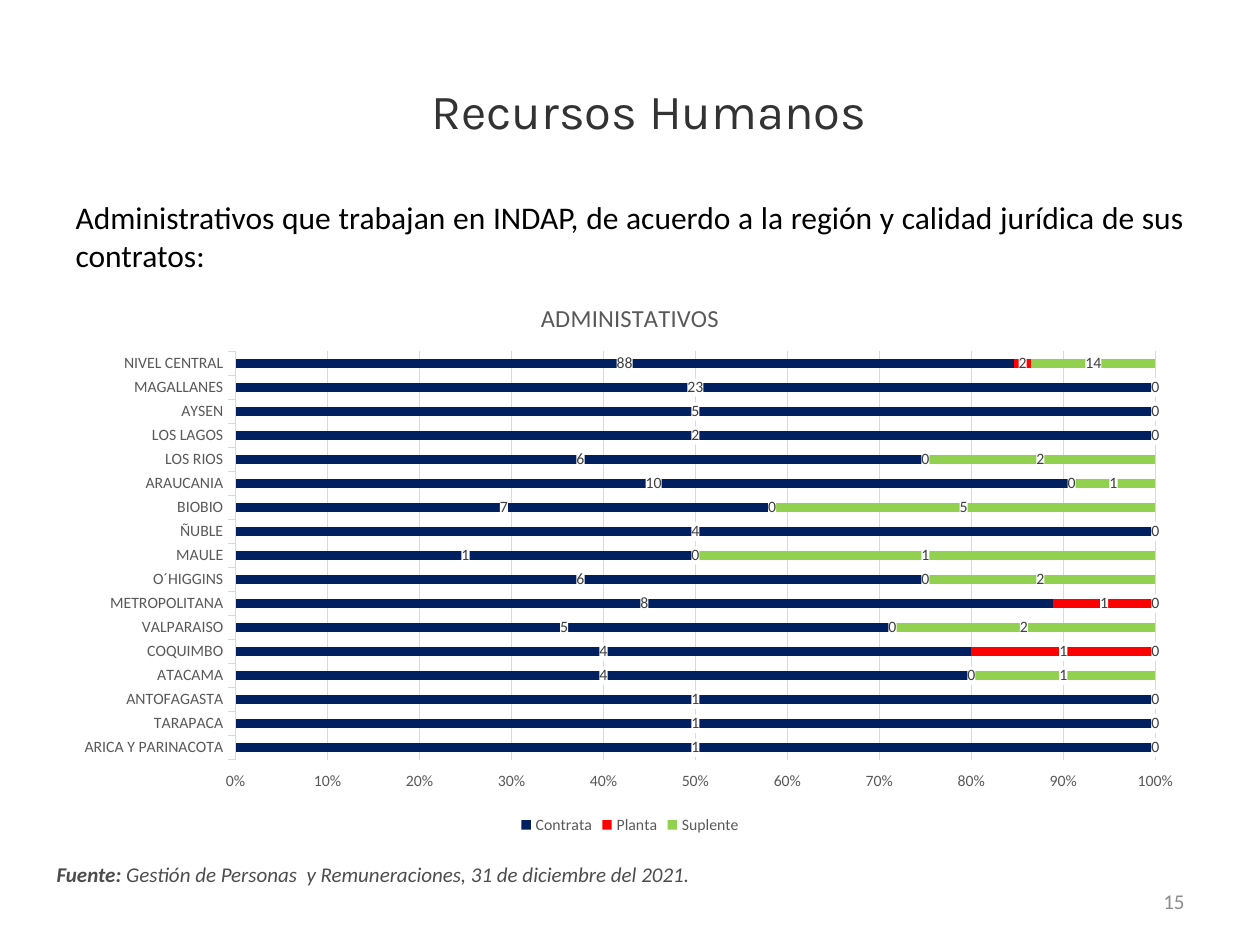
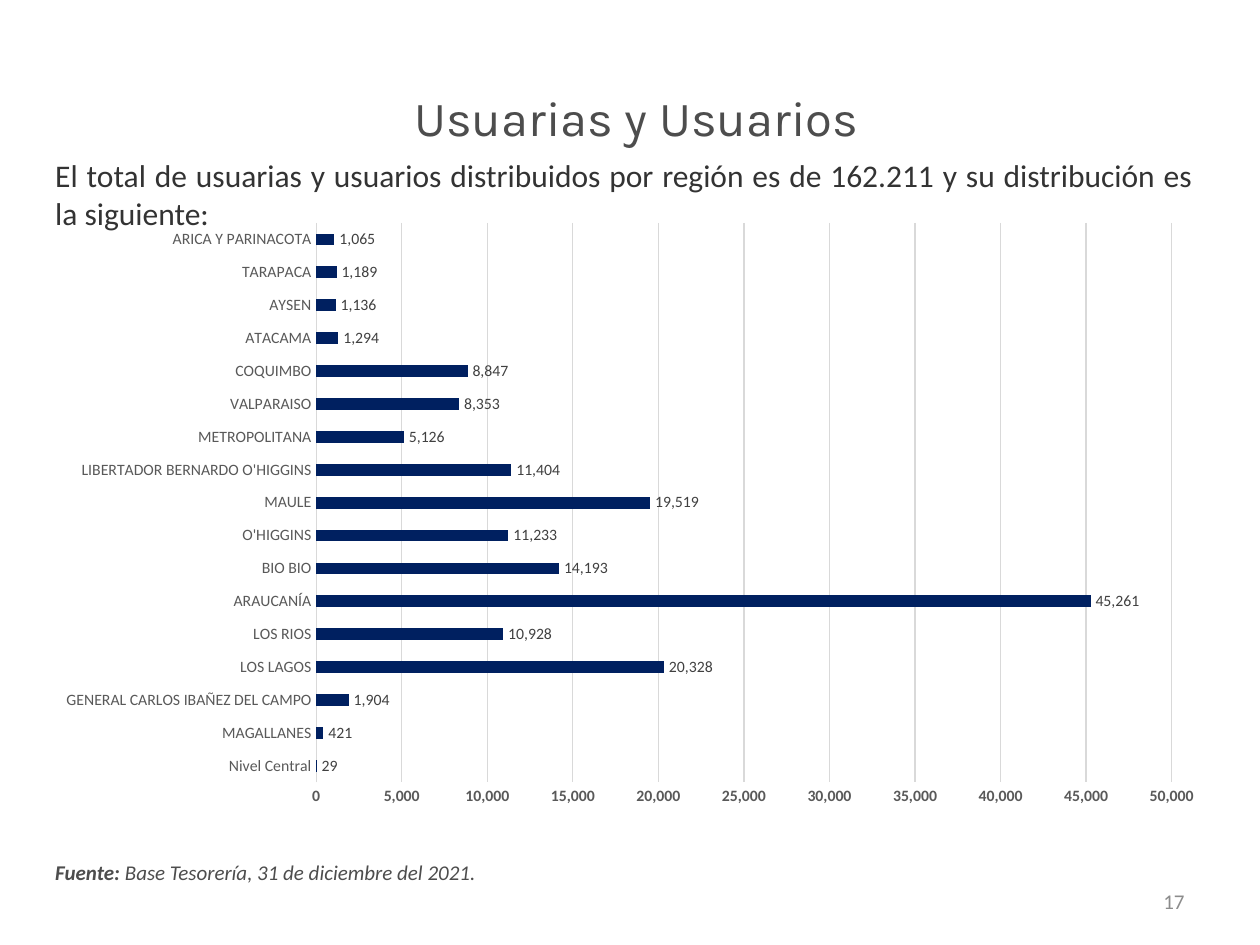
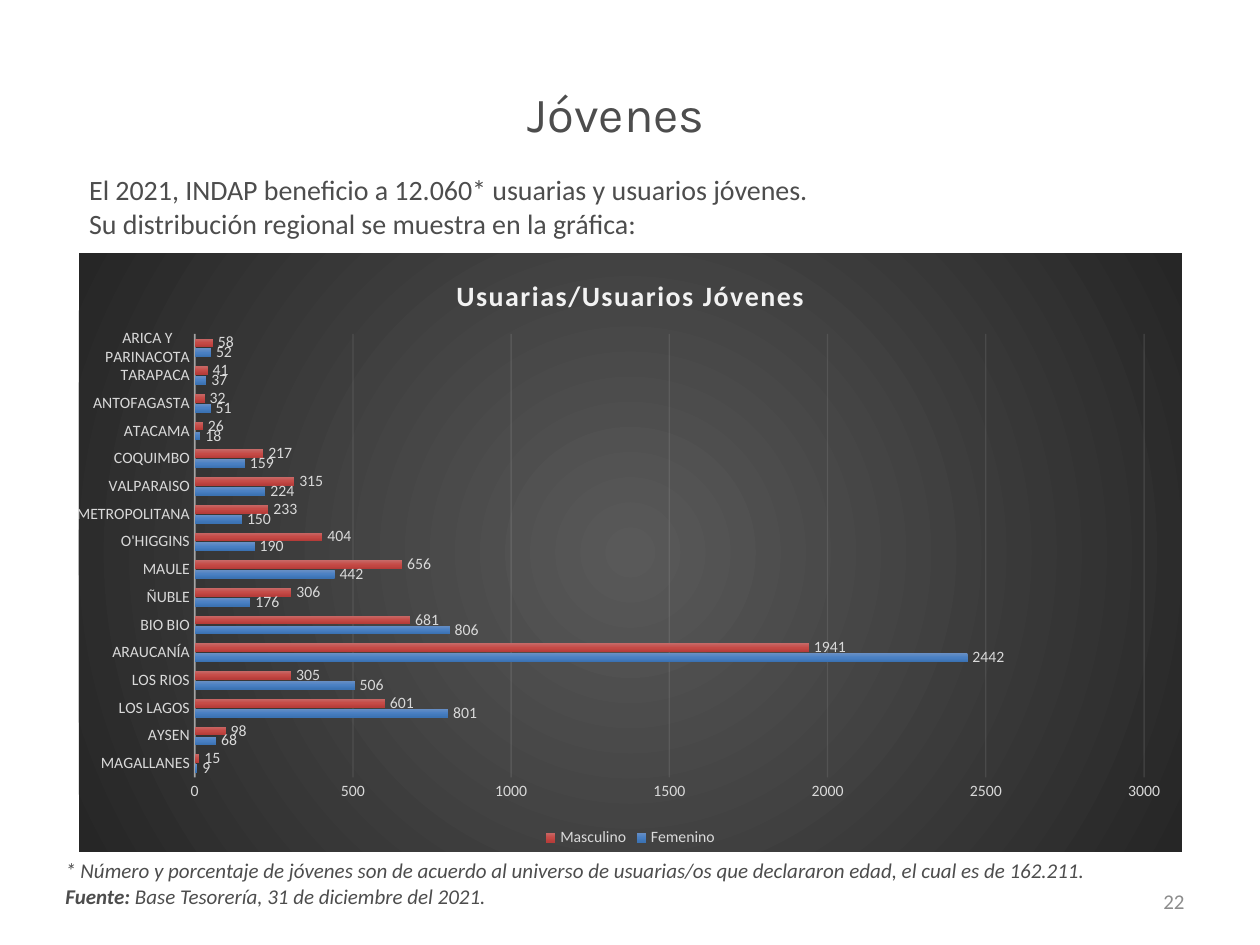
from lxml import etree
from pptx import Presentation
from pptx.chart.data import CategoryChartData
from pptx.dml.color import RGBColor
from pptx.enum.chart import XL_CHART_TYPE, XL_LABEL_POSITION, XL_LEGEND_POSITION, XL_TICK_MARK
from pptx.enum.text import MSO_ANCHOR, MSO_AUTO_SIZE, PP_ALIGN
from pptx.oxml import parse_xml
from pptx.oxml.ns import nsdecls, qn
from pptx.util import Inches, Pt

# Shared look
BODY_FONT, TITLE_FONT = "Calibri", "Karla"
INK, GRAY, DARK, NUMBER_GRAY = "4D4D4D", "595959", "333333", "8C8C8C"
LABEL_GRAY, GRID, PALE, WHITE = "404040", "D9D9D9", "F2F2F2", "FFFFFF"
NAVY, RED, GREEN = "002060", "FF0000", "92D050"
BLUE_SHADES = ["688FC5", "4A80C3", "3B72B3"]
RED_SHADES = ["C76967", "C64B47", "B63C39"]
BACKDROP_SHADES = ["595959", "262626"]
NUMBER_BOX = (7.17, 6.95, 2.33, 0.4)
SOURCE = ("Fuente: ", {"bold": True})


def rgb(color):
    return RGBColor.from_string(color)


def set_font(font, size, color, name=BODY_FONT, bold=False, italic=False):
    font.size, font.name, font.bold, font.italic = Pt(size), name, bold, italic
    font.color.rgb = rgb(color)


# Text
def write_text(shape, paragraphs, align=PP_ALIGN.LEFT, anchor=MSO_ANCHOR.TOP, **font):
    """Each paragraph is a list of (text, font overrides) runs."""
    frame = shape.text_frame
    frame.word_wrap = True
    frame.auto_size = MSO_AUTO_SIZE.NONE
    frame.vertical_anchor = anchor
    for index, runs in enumerate(paragraphs):
        paragraph = frame.add_paragraph() if index else frame.paragraphs[0]
        paragraph.alignment = align
        paragraph.space_before = Pt(0)
        for text, overrides in runs:
            run = paragraph.add_run()
            run.text = text
            set_font(run.font, **{**font, **overrides})


def place(shape, box):
    shape.left, shape.top, shape.width, shape.height = map(Inches, box)


def add_text(slide, box, paragraphs, **style):
    write_text(slide.shapes.add_textbox(*map(Inches, box)), paragraphs, **style)


def add_title(slide, box, text, color=INK):
    place(slide.shapes.title, box)
    write_text(slide.shapes.title, [[(text, {})]], align=PP_ALIGN.CENTER,
               anchor=MSO_ANCHOR.MIDDLE, size=28, color=color, name=TITLE_FONT)


def add_body(slide, box, text):
    body = slide.placeholders[1]
    place(body, box)
    write_text(body, [[(text, {})]], align=PP_ALIGN.JUSTIFY, size=18, color="000000")
    properties = body.text_frame.paragraphs[0]._p.get_or_add_pPr()
    properties.set("marL", "0")
    properties.set("indent", "0")
    etree.SubElement(properties, qn("a:buNone"))


def add_footer(slide, source_box, paragraphs, number):
    add_text(slide, source_box, paragraphs, size=12, color=INK, italic=True)
    add_text(slide, NUMBER_BOX, [[(number, {})]], align=PP_ALIGN.RIGHT,
             anchor=MSO_ANCHOR.MIDDLE, size=12, color=NUMBER_GRAY)


# Chart formatting
def gradient(shades, direction):
    last = len(shades) - 1
    stops = "".join(f'<a:gs pos="{100000 * i // last}"><a:srgbClr val="{shade}"/></a:gs>'
                    for i, shade in enumerate(shades))
    return f"<a:gradFill><a:gsLst>{stops}</a:gsLst>{direction}</a:gradFill>"


def shape_properties(fill):
    return parse_xml(f'<c:spPr {nsdecls("c", "a")}>{fill}<a:ln><a:noFill/></a:ln></c:spPr>')


def style_line(line, color, width=0.75, opacity=100):
    line.color.rgb = rgb(color)
    line.width = Pt(width)
    if opacity < 100:
        swatch = line._ln.find(".//" + qn("a:srgbClr"))
        etree.SubElement(swatch, qn("a:alpha"), val=str(opacity * 1000))


def place_plot(chart, box, plot_box):
    left, top, width, height = box
    x, y, w, h = plot_box
    shares = {"x": (x - left) / width, "y": (y - top) / height, "w": w / width, "h": h / height}
    values = "".join(f'<c:{key} val="{share:.4f}"/>' for key, share in shares.items())
    area = chart._chartSpace.find(".//" + qn("c:plotArea"))
    for layout in area.findall(qn("c:layout")):
        area.remove(layout)
    area.insert(0, parse_xml(
        f'<c:layout {nsdecls("c")}><c:manualLayout><c:layoutTarget val="inner"/>'
        f'<c:xMode val="edge"/><c:yMode val="edge"/>{values}</c:manualLayout></c:layout>'))


def style_axes(chart, color, tick, maximum, step, number_format, bold_values, axis_line,
               grid_line, label_skip):
    categories, values = chart.category_axis, chart.value_axis
    for axis in (categories, values):
        axis.major_tick_mark, axis.minor_tick_mark = tick, XL_TICK_MARK.NONE
        set_font(axis.tick_labels.font, 9, color, bold=bold_values and axis is values)
    categories.has_major_gridlines = False
    style_line(categories.format.line, *axis_line)
    skip = parse_xml(f'<c:tickLblSkip {nsdecls("c")} val="{label_skip}"/>')
    categories._element.find(qn("c:noMultiLvlLbl")).addprevious(skip)
    values.minimum_scale, values.maximum_scale, values.major_unit = 0, maximum, step
    values.tick_labels.number_format = number_format
    values.tick_labels.number_format_is_linked = False
    values.format.line.fill.background()
    values.has_major_gridlines = True
    style_line(values.major_gridlines.format.line, *grid_line)


def style_series(series, fill, label_color, label_format, label_position, label_fill):
    series.invert_if_negative = False
    if isinstance(fill, list):
        properties = series._element.get_or_add_spPr()
        properties.getparent().replace(properties, shape_properties(
            gradient(fill, '<a:lin ang="5400000" scaled="0"/>')))
    else:
        series.format.fill.solid()
        series.format.fill.fore_color.rgb = rgb(fill)
    labels = series.data_labels
    labels.show_value = True
    labels.position = label_position
    labels.number_format, labels.number_format_is_linked = label_format, False
    set_font(labels.font, 9, label_color)
    if label_fill:
        labels._element.find(qn("c:txPr")).addprevious(shape_properties(
            f'<a:solidFill><a:srgbClr val="{label_fill}"/></a:solidFill>'))


def add_bar_chart(slide, box, plot_box, regions, groups, fills, gap, overlap=None,
                  kind=XL_CHART_TYPE.BAR_CLUSTERED, title=None, title_style=None,
                  title_spacing=0, text_color=GRAY, label_color=LABEL_GRAY,
                  label_format="General", label_position=XL_LABEL_POSITION.OUTSIDE_END,
                  label_fill=None, legend=True, backdrop=None, tick=XL_TICK_MARK.NONE,
                  maximum=1, step=0.1, number_format="General", bold_values=False,
                  axis_line=(GRID,), grid_line=(GRID,), label_skip=1):
    data = CategoryChartData()
    data.categories = regions
    for name, counts in groups.items():
        data.add_series(name, counts)
    chart = slide.shapes.add_chart(kind, *map(Inches, box), data).chart
    set_font(chart.font, 10, "000000")
    place_plot(chart, box, plot_box)
    style_axes(chart, text_color, tick, maximum, step, number_format, bold_values,
               axis_line, grid_line, label_skip)
    plot = chart.plots[0]
    plot.vary_by_categories = False
    plot.gap_width = gap
    if overlap is not None:
        plot.overlap = overlap
    for series, fill in zip(plot.series, fills):
        style_series(series, fill, label_color, label_format, label_position, label_fill)

    chart.has_title = title is not None
    if title:
        heading = chart.chart_title.text_frame.paragraphs[0].add_run()
        heading.text = title
        set_font(heading.font, **title_style)
        heading._r.get_or_add_rPr().set("spc", str(title_spacing))
        chart.chart_title.include_in_layout = False
    chart.has_legend = legend
    if legend:
        chart.legend.position = XL_LEGEND_POSITION.BOTTOM
        chart.legend.include_in_layout = False
        set_font(chart.legend.font, 9, text_color)
    if backdrop:
        center = ('<a:path path="circle">'
                  '<a:fillToRect l="50000" t="50000" r="50000" b="50000"/></a:path>')
        chart._chartSpace.find(qn("c:chart")).addnext(
            shape_properties(gradient(backdrop, center)))


# Slides
def build_staff(slide):
    add_title(slide, (0.65, 0.37, 9, 1.01), "Recursos Humanos", color=DARK)
    add_body(slide, (0.5, 1.52, 9, 5.18),
             "Administrativos que trabajan en INDAP, de acuerdo a la región y calidad "
             "jurídica de sus contratos:")
    add_footer(slide, (0.35, 6.79, 5.75, 0.3), [[SOURCE, (
        "Gestión de Personas  y Remuneraciones, 31 de diciembre del 2021.", {})]], "15")
    add_bar_chart(
        slide, (0.5, 2.21, 9, 4.45), (1.87, 2.79, 7.3, 3.24),
        ["ARICA Y PARINACOTA", "TARAPACA", "ANTOFAGASTA", "ATACAMA", "COQUIMBO",
         "VALPARAISO", "METROPOLITANA", "O´HIGGINS", "MAULE", "ÑUBLE", "BIOBIO",
         "ARAUCANIA", "LOS RIOS", "LOS LAGOS", "AYSEN", "MAGALLANES", "NIVEL CENTRAL"],
        {"Contrata": [1, 1, 1, 4, 4, 5, 8, 6, 1, 4, 7, 10, 6, 2, 5, 23, 88],
         "Planta": [0, 0, 0, 0, 1, 0, 1, 0, 0, 0, 0, 0, 0, 0, 0, 0, 2],
         "Suplente": [0, 0, 0, 1, 0, 2, 0, 2, 1, 0, 5, 1, 2, 0, 0, 0, 14]},
        [NAVY, RED, GREEN], gap=150, overlap=100, kind=XL_CHART_TYPE.BAR_STACKED_100,
        title="ADMINISTATIVOS", title_style={"size": 14, "color": GRAY},
        label_position=XL_LABEL_POSITION.CENTER, label_fill=WHITE,
        tick=XL_TICK_MARK.OUTSIDE, number_format="0%")


def build_users(slide):
    add_title(slide, (0.55, 0.3, 9, 1.25), "Usuarias y Usuarios")
    add_footer(slide, (0.34, 6.77, 5.04, 0.3), [[SOURCE, (
        "Base Tesorería, 31 de diciembre del 2021.", {})]], "17")
    add_text(slide, (0.34, 1.19, 9.23, 5.05), [[(
        "El total de usuarias y usuarios distribuidos por región es de 162.211 y su "
        "distribución es la siguiente:", {})]], align=PP_ALIGN.JUSTIFY, size=18, color=DARK)
    add_bar_chart(
        slide, (0.34, 1.67, 9.32, 4.83), (2.51, 1.77, 6.79, 4.44),
        ["Nivel Central", "MAGALLANES", "GENERAL CARLOS IBAÑEZ DEL CAMPO", "LOS LAGOS",
         "LOS RIOS", "ARAUCANÍA", "BIO BIO", "O'HIGGINS", "MAULE",
         "LIBERTADOR BERNARDO O'HIGGINS", "METROPOLITANA", "VALPARAISO", "COQUIMBO",
         "ATACAMA", "AYSEN", "TARAPACA", "ARICA Y PARINACOTA"],
        {"Series 1": [29, 421, 1904, 20328, 10928, 45261, 14193, 11233, 19519, 11404,
                      5126, 8353, 8847, 1294, 1136, 1189, 1065]},
        [NAVY], gap=182, legend=False, label_format="#,##0_);\\(#,##0\\)",
        maximum=50000, step=5000, number_format="#,##0", bold_values=True)


def build_youth(slide):
    add_title(slide, (0.39, 0.41, 9, 0.97), "Jóvenes")
    add_text(slide, (0.61, 1.32, 9, 0.64), [
        [("El 2021, INDAP beneficio a 12.060* usuarias y usuarios jóvenes.", {})],
        [("Su distribución regional se muestra en la gráfica:", {})]],
        align=PP_ALIGN.JUSTIFY, size=16, color=INK)
    add_footer(slide, (0.42, 6.76, 8.65, 0.5), [
        [("* Número y porcentaje de jóvenes son de acuerdo al universo de usuarias/os que "
          "declararon edad, el cual es de 162.211.", {})],
        [SOURCE, ("Base Tesorería, 31 de diciembre del 2021.", {})]], "22")
    add_bar_chart(
        slide, (0.61, 2.01, 8.77, 4.75), (1.53, 2.65, 7.55, 3.52),
        ["MAGALLANES", "AYSEN", "LOS LAGOS", "LOS RIOS", "ARAUCANÍA", "BIO BIO", "ÑUBLE",
         "MAULE", "O'HIGGINS", "METROPOLITANA", "VALPARAISO", "COQUIMBO", "ATACAMA",
         "ANTOFAGASTA", "TARAPACA", "ARICA Y PARINACOTA"],
        {"Femenino": [9, 68, 801, 506, 2442, 806, 176, 442, 190, 150, 224, 159, 18, 51,
                      37, 52],
         "Masculino": [15, 98, 601, 305, 1941, 681, 306, 656, 404, 233, 315, 217, 26, 32,
                       41, 58]},
        [BLUE_SHADES, RED_SHADES], gap=115, overlap=-20,
        title="Usuarias/Usuarios Jóvenes", title_spacing=100,
        title_style={"size": 16, "color": PALE, "bold": True},
        text_color=GRID, label_color=GRID, backdrop=BACKDROP_SHADES,
        maximum=3000, step=500, axis_line=(PALE, 1, 54), grid_line=(PALE, 0.75, 10),
        label_skip=2)


def main():
    deck = Presentation()
    deck.slide_width, deck.slide_height = Inches(10), Inches(7.5)
    title_and_content, title_only = deck.slide_layouts[1], deck.slide_layouts[5]
    for layout, build in ((title_and_content, build_staff), (title_only, build_users),
                          (title_only, build_youth)):
        build(deck.slides.add_slide(layout))
    deck.save("out.pptx")


if __name__ == "__main__":
    main()
